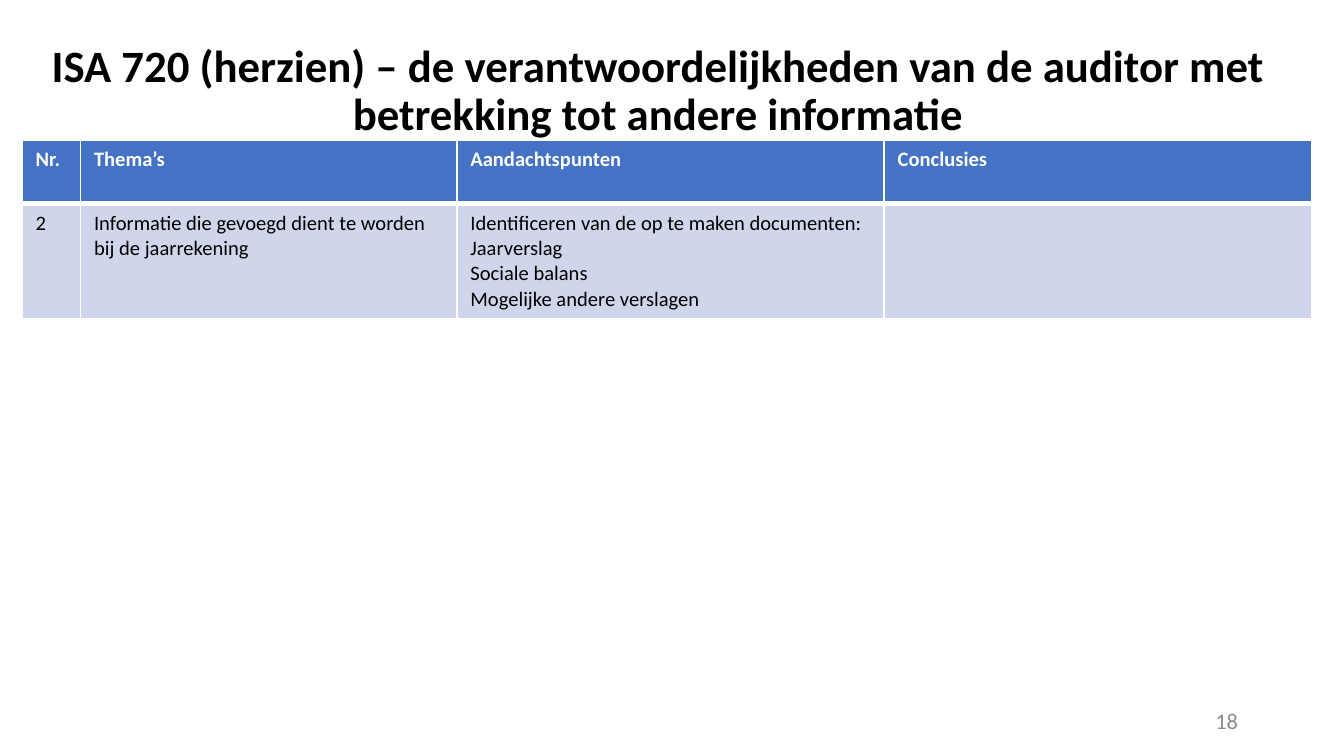
from lxml.etree import SubElement
from pptx import Presentation
from pptx.dml.color import RGBColor
from pptx.enum.text import MSO_ANCHOR, MSO_AUTO_SIZE, PP_ALIGN
from pptx.oxml.ns import qn
from pptx.util import Emu, Pt

PX = 4572  # EMU per px, 200 px to the inch
FONT = "Calibri"
WHITE, BLACK, GREY = "FFFFFF", "000000", "8C8C8C"
HEADER_BLUE, ROW_BLUE = "4472C4", "CFD5EA"

TITLE = ("ISA 720 (herzien) – de verantwoordelijkheden van de auditor "
         "met betrekking tot andere informatie")
COLUMN_WIDTHS = [87, 560, 636, 636]
ROW_HEIGHTS = [94, 116]
TABLE_HEIGHT = 262
ROWS = [
    ["Nr.", "Thema’s", "Aandachtspunten", "Conclusies"],
    [
        "2",
        "Informatie die gevoegd dient te worden bij de jaarrekening",
        "Identificeren van de op te maken documenten:\nJaarverslag\n"
        "Sociale balans\nMogelijke andere verslagen",
        "",
    ],
]


def px(length):
    return Emu(length * PX)


def color(hex_value):
    return RGBColor.from_string(hex_value)


def format_text(frame, size, hex_value, bold=False, align=PP_ALIGN.LEFT, spacing=None):
    for paragraph in frame.paragraphs:
        paragraph.alignment = align
        paragraph.line_spacing = spacing
        for font in [paragraph.font] + [run.font for run in paragraph.runs]:
            font.name = FONT
            font.size = Pt(size)
            font.bold = bold
            font.color.rgb = color(hex_value)


def set_borders(cell, top, bottom):
    properties = cell._tc.get_or_add_tcPr()
    widths = {"a:lnL": 1, "a:lnR": 1, "a:lnT": top, "a:lnB": bottom}
    for index, (tag, width) in enumerate(widths.items()):
        line = SubElement(properties, qn(tag), w=str(Pt(width)))
        fill = SubElement(line, qn("a:solidFill"))
        SubElement(fill, qn("a:srgbClr"), val=WHITE)
        properties.insert(index, line)  # borders come before the cell fill


def set_title(slide):
    title = slide.shapes.title
    title.left, title.top, title.width, title.height = map(px, (36, 28, 1886, 218))
    frame = title.text_frame
    frame.text = TITLE
    frame.word_wrap = True
    frame.auto_size = MSO_AUTO_SIZE.NONE
    frame.vertical_anchor = MSO_ANCHOR.MIDDLE
    format_text(frame, 24, BLACK, bold=True, align=PP_ALIGN.CENTER, spacing=0.9)


def add_topics_table(slide):
    topics = slide.shapes.add_table(
        len(ROWS), len(COLUMN_WIDTHS), px(33), px(209),
        px(sum(COLUMN_WIDTHS)), px(TABLE_HEIGHT))
    for column, width in zip(topics.table.columns, COLUMN_WIDTHS):
        column.width = px(width)
    for index, (row, height) in enumerate(zip(topics.table.rows, ROW_HEIGHTS)):
        row.height = px(height)
        is_header = index == 0
        for cell, text in zip(row.cells, ROWS[index]):
            cell.fill.solid()
            cell.fill.fore_color.rgb = color(HEADER_BLUE if is_header else ROW_BLUE)
            # A thick line parts the header from the row below it
            set_borders(cell, *((1, 3) if is_header else (3, 1)))
            cell.text_frame.text = text
            format_text(cell.text_frame, 11, WHITE if is_header else BLACK, bold=is_header)
    topics.height = px(TABLE_HEIGHT)


def add_page_number(slide, number):
    frame = slide.shapes.add_textbox(*map(px, (1412, 1043, 450, 60))).text_frame
    frame.text = number
    frame.word_wrap = True
    frame.vertical_anchor = MSO_ANCHOR.MIDDLE
    format_text(frame, 12, GREY, align=PP_ALIGN.RIGHT)


def main():
    presentation = Presentation()
    presentation.slide_width, presentation.slide_height = px(2000), px(1125)
    title_only = presentation.slide_layouts[5]
    slide = presentation.slides.add_slide(title_only)

    set_title(slide)
    add_topics_table(slide)
    add_page_number(slide, "18")

    presentation.save("out.pptx")


if __name__ == "__main__":
    main()
